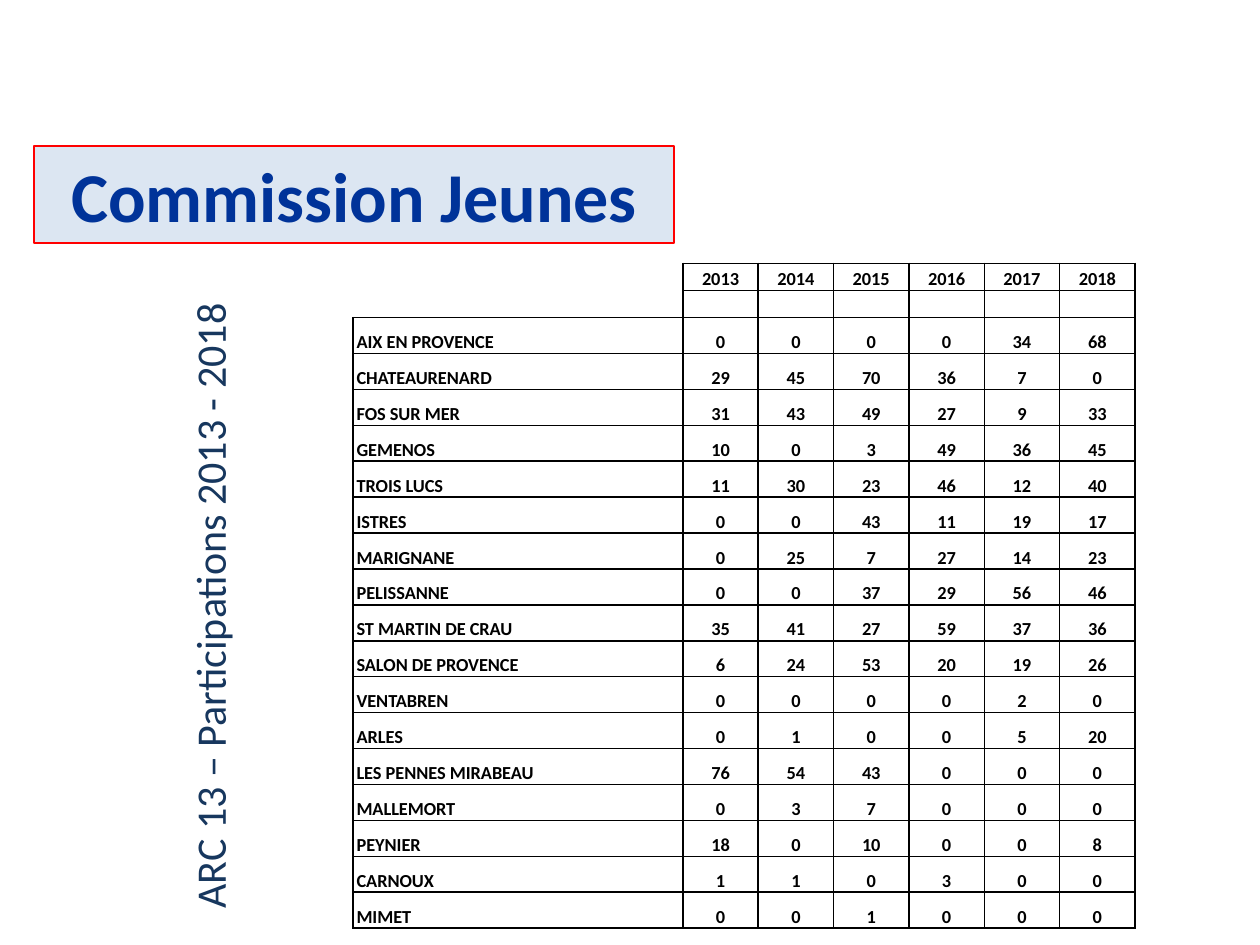
from lxml.etree import SubElement
from pptx import Presentation
from pptx.dml.color import RGBColor
from pptx.enum.text import MSO_ANCHOR as Anchor, PP_ALIGN as Align
from pptx.oxml.ns import qn
from pptx.util import Inches, Pt

FONT = "Calibri"
YEARS = ["2013", "2014", "2015", "2016", "2017", "2018"]
CLUBS = [
    ("AIX EN PROVENCE", 0, 0, 0, 0, 34, 68),
    ("CHATEAURENARD", 29, 45, 70, 36, 7, 0),
    ("FOS SUR MER", 31, 43, 49, 27, 9, 33),
    ("GEMENOS", 10, 0, 3, 49, 36, 45),
    ("TROIS LUCS", 11, 30, 23, 46, 12, 40),
    ("ISTRES", 0, 0, 43, 11, 19, 17),
    ("MARIGNANE", 0, 25, 7, 27, 14, 23),
    ("PELISSANNE", 0, 0, 37, 29, 56, 46),
    ("ST MARTIN DE CRAU", 35, 41, 27, 59, 37, 36),
    ("SALON DE PROVENCE", 6, 24, 53, 20, 19, 26),
    ("VENTABREN", 0, 0, 0, 0, 2, 0),
    ("ARLES", 0, 1, 0, 0, 5, 20),
    ("LES PENNES MIRABEAU", 76, 54, 43, 0, 0, 0),
    ("MALLEMORT", 0, 3, 7, 0, 0, 0),
    ("PEYNIER", 18, 0, 10, 0, 0, 8),
    ("CARNOUX", 1, 1, 0, 3, 0, 0),
    ("MIMET", 0, 0, 1, 0, 0, 0),
]


def color(value):
    return RGBColor.from_string(value)


def write(frame, text, size=10.5, fill="000000", bold=False, align=Align.LEFT, spacing=None):
    para = frame.paragraphs[0]
    para.alignment = align
    if spacing:
        para.line_spacing = spacing
    if not text:
        # An empty cell still needs its size, or its row grows
        SubElement(para._p, qn("a:endParaRPr"), sz=str(int(size * 100)))
        return
    span = para.add_run()
    span.text = text
    span.font.name = FONT
    span.font.size = Pt(size)
    span.font.bold = bold
    span.font.color.rgb = color(fill)


def set_borders(cell, sides):
    props = cell._tc.get_or_add_tcPr()
    for side in "LRTB":
        line = SubElement(props, qn(f"a:ln{side}"), w=str(Pt(1)))
        if side in sides:
            solid = SubElement(line, qn("a:solidFill"))
            SubElement(solid, qn("a:srgbClr"), val="000000")
        else:
            SubElement(line, qn("a:noFill"))


def add_title(page, left, top, width, height):
    title = page.shapes.title
    title.left, title.top, title.width, title.height = left, top, width, height
    title.fill.solid()
    title.fill.fore_color.rgb = color("DCE6F2")
    title.line.color.rgb = color("FF0000")
    title.line.width = Pt(0.75)
    title.text_frame.vertical_anchor = Anchor.MIDDLE
    write(title.text_frame, "Commission Jeunes", size=40, fill="003399", bold=True,
          align=Align.CENTER)


def add_side_heading(page, left, top, width, height):
    box = page.shapes.add_textbox(left, top, width, height)
    box.rotation = 270
    frame = box.text_frame
    frame.word_wrap = True
    frame.vertical_anchor = Anchor.TOP
    frame.margin_left = Inches(0.21)
    frame.margin_top = Inches(0.63)
    write(frame, "ARC 13 – Participations 2013 - 2018", size=24, fill="17375E")


def add_participation_table(page, left, top, width, height):
    rows = [("", *YEARS), ("",) * (len(YEARS) + 1), *CLUBS]
    heading_rows = len(rows) - len(CLUBS)
    table = page.shapes.add_table(len(rows), len(rows[0]), left, top, width, height).table
    table.first_row = table.horz_banding = False

    # Column widths and row heights
    name_width = Inches(2.62)
    heading_height = Inches(0.215)
    for index, column in enumerate(table.columns):
        column.width = (width - name_width) // len(YEARS) if index else name_width
    for index, row in enumerate(table.rows):
        body_height = (height - heading_rows * heading_height) // len(CLUBS)
        row.height = heading_height if index < heading_rows else body_height

    # Cells
    for r, values in enumerate(rows):
        for c, value in enumerate(values):
            cell = table.cell(r, c)
            cell.margin_left = cell.margin_right = Inches(0.03)
            cell.margin_top = cell.margin_bottom = 0
            cell.vertical_anchor = Anchor.BOTTOM
            write(cell.text_frame, str(value), bold=True, spacing=1.15,
                  align=Align.CENTER if c else Align.LEFT)
            sides = "LRTB"
            if c == 0 and r < heading_rows:
                sides = "RB" if r == heading_rows - 1 else "R"
            set_borders(cell, sides)
            cell.fill.background()


def main():
    deck = Presentation()
    deck.slide_width, deck.slide_height = Inches(10), Inches(7.5)
    page = deck.slides.add_slide(deck.slide_layouts[5])
    add_side_heading(page, Inches(-1.44), Inches(3.97), Inches(5.72), Inches(1.18))
    add_title(page, Inches(0.27), Inches(1.16), Inches(5.08), Inches(0.77))
    add_participation_table(page, Inches(2.8), Inches(2.09), Inches(6.21), Inches(5.28))
    deck.save("out.pptx")


if __name__ == "__main__":
    main()
